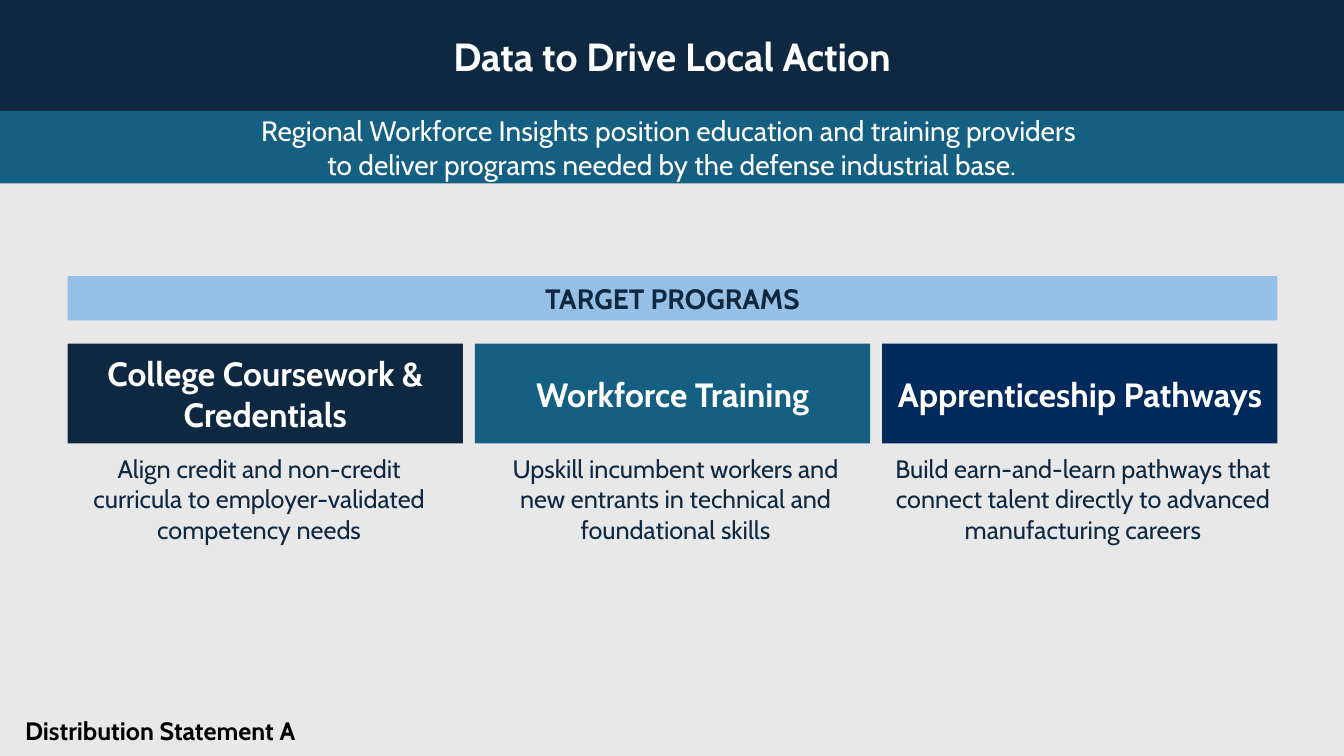
from dataclasses import dataclass

import pptx
import pptx.dml.color
import pptx.enum.shapes
import pptx.enum.text
import pptx.shapes.autoshape
import pptx.util

EMU_PER_PX = 9144
FONT = "Cabin"
NAVY, TEAL, BLUE, SKY = "0E2841", "156082", "002A5C", "96C0E6"
WHITE, BLACK, GREY = "FFFFFF", "000000", "E8E8E8"
SLIDE_WIDTH, SLIDE_HEIGHT = 1333, 750
MARGIN, CARD_WIDTH, CARD_GAP = 67, 392, 12
CENTER = pptx.enum.text.PP_ALIGN.CENTER
LEFT = pptx.enum.text.PP_ALIGN.LEFT
MIDDLE = pptx.enum.text.MSO_ANCHOR.MIDDLE
TOP = pptx.enum.text.MSO_ANCHOR.TOP
BOTTOM = pptx.enum.text.MSO_ANCHOR.BOTTOM


@dataclass(frozen=True)
class Block:
    left: int
    top: int
    width: int
    height: int
    lines: tuple[str, ...]
    size: int
    color: str = WHITE
    bold: bool = True
    fill: str | None = None
    align: pptx.enum.text.PP_ALIGN = CENTER
    anchor: pptx.enum.text.MSO_ANCHOR = MIDDLE
    inset_x: int = 20
    inset_y: int = 5
    line_spacing: float | None = None


@dataclass(frozen=True)
class Program:
    title: str
    fill: str
    description: str
    text_left: int
    text_width: int


BANNERS = (
    Block(0, 0, SLIDE_WIDTH, 110, ("Data to Drive Local Action",), 28, fill=NAVY),
    Block(0, 110, SLIDE_WIDTH, 72, (
        "Regional Workforce Insights position education and training providers ",
        "to deliver programs needed by the defense industrial base.",
    ), 20, bold=False, fill=TEAL),
    Block(MARGIN, 274, 1200, 44, ("TARGET PROGRAMS",), 20, color=NAVY, fill=SKY),
)
PROGRAMS = (
    Program("College Coursework & Credentials", NAVY,
            "Align credit and non-credit curricula to employer-validated competency needs",
            79, 356),
    Program("Workforce Training", TEAL,
            "Upskill incumbent workers and new entrants in technical and foundational skills",
            492, 356),
    Program("Apprenticeship Pathways", BLUE,
            "Build earn-and-learn pathways that connect talent directly to advanced manufacturing careers",
            878, 392),
)
FOOTER = Block(15, 703, 714, 42, ("Distribution Statement A",), 18, color=BLACK,
               align=LEFT, anchor=BOTTOM, inset_x=10, line_spacing=0.9)


def px(length: int) -> pptx.util.Emu:
    return pptx.util.Emu(length * EMU_PER_PX)


def rgb(color: str) -> pptx.dml.color.RGBColor:
    return pptx.dml.color.RGBColor.from_string(color)


def write_text(shape: pptx.shapes.autoshape.Shape, block: Block) -> None:
    frame = shape.text_frame
    frame.word_wrap = True
    frame.vertical_anchor = block.anchor
    frame.margin_left = frame.margin_right = px(block.inset_x)
    frame.margin_top = frame.margin_bottom = px(block.inset_y)
    frame.text = "\n".join(block.lines)
    for paragraph in frame.paragraphs:
        paragraph.alignment = block.align
        if block.line_spacing is not None:
            paragraph.line_spacing = block.line_spacing
        paragraph.font.name = FONT
        paragraph.font.size = pptx.util.Pt(block.size)
        paragraph.font.bold = block.bold
        paragraph.font.color.rgb = rgb(block.color)


def draw_block(slide: pptx.slide.Slide, block: Block) -> None:
    bounds = [px(length) for length in (block.left, block.top, block.width, block.height)]
    if block.fill is None:
        shape = slide.shapes.add_textbox(*bounds)
    else:
        shape = slide.shapes.add_shape(pptx.enum.shapes.MSO_SHAPE.RECTANGLE, *bounds)
        shape.shadow.inherit = False
        shape.fill.solid()
        shape.fill.fore_color.rgb = rgb(block.fill)
        shape.line.fill.background()
    write_text(shape, block)


def draw_program(slide: pptx.slide.Slide, program: Program, column: int) -> None:
    left = MARGIN + column * (CARD_WIDTH + CARD_GAP)
    draw_block(slide, Block(left, 341, CARD_WIDTH, 99, (program.title,), 24,
                            fill=program.fill, inset_x=10, inset_y=10))
    draw_block(slide, Block(program.text_left, 445, program.text_width, 87,
                            (program.description,), 18, color=NAVY, bold=False,
                            anchor=TOP, inset_x=10))


def main() -> None:
    presentation = pptx.Presentation()
    presentation.slide_width = px(SLIDE_WIDTH)
    presentation.slide_height = px(SLIDE_HEIGHT)
    slide = presentation.slides.add_slide(presentation.slide_layouts[6])
    slide.background.fill.solid()
    slide.background.fill.fore_color.rgb = rgb(GREY)
    for banner in BANNERS:
        draw_block(slide, banner)
    for column, program in enumerate(PROGRAMS):
        draw_program(slide, program, column)
    draw_block(slide, FOOTER)
    presentation.save("out.pptx")


if __name__ == "__main__":
    main()
